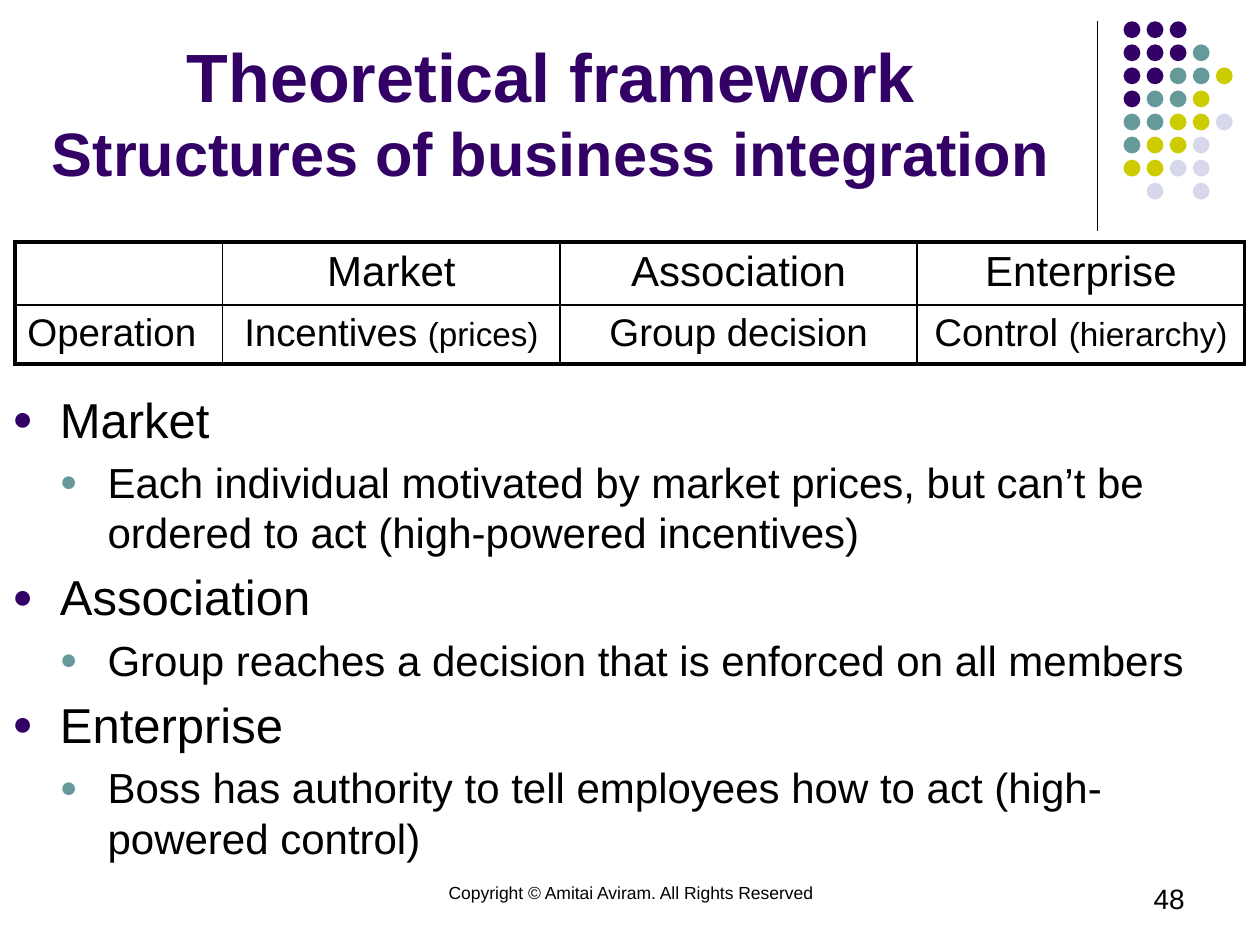
from dataclasses import dataclass

from lxml.etree import SubElement
from pptx import Presentation
from pptx.dml.color import RGBColor
from pptx.enum.shapes import MSO_CONNECTOR, MSO_SHAPE
from pptx.enum.text import MSO_ANCHOR, PP_ALIGN
from pptx.oxml.ns import qn
from pptx.util import Cm, Pt


@dataclass(frozen=True)
class Theme:
    font: str = "Arial"
    ink: str = "000000"
    purple: str = "330066"
    teal: str = "669999"
    olive: str = "CCCC00"
    lavender: str = "D8D8EC"
    title: int = 39
    subtitle: int = 35
    topic: int = 28
    detail: int = 24
    operation: int = 22
    aside: int = 19
    page: int = 16
    footer: int = 10


theme = Theme()


def add_run(paragraph, text, size, color=theme.ink, bold=False):
    run = paragraph.add_run()
    run.text = text
    run.font.name = theme.font
    run.font.size = Pt(size)
    run.font.bold = bold
    run.font.color.rgb = RGBColor.from_string(color)


def add_text_frame(left, top, width, height):
    frame = slide.shapes.add_textbox(Cm(left), Cm(top), Cm(width), Cm(height)).text_frame
    frame.word_wrap = True
    return frame


prs = Presentation()
prs.slide_width, prs.slide_height = Cm(25.4), Cm(19.05)
slide = prs.slides.add_slide(prs.slide_layouts[6])

divider = slide.shapes.add_connector(
    MSO_CONNECTOR.STRAIGHT, Cm(22.12), Cm(0.43), Cm(22.12), Cm(4.65)
)
divider.line.color.rgb = RGBColor.from_string(theme.ink)
divider.line.width = Pt(0.75)
SubElement(divider._element.spPr, qn("a:effectLst"))

dot_colors = {"P": theme.purple, "T": theme.teal, "O": theme.olive, "L": theme.lavender}
dot_rows = ["PPP", "PPPT", "PPTTO", "PTTO", "TTOOL", "TOOL", "OOLL", " L L"]
dot_pitch, dot_size = 0.465, 0.34
for row, letters in enumerate(dot_rows):
    for column, letter in enumerate(letters):
        if letter == " ":
            continue
        dot = slide.shapes.add_shape(
            MSO_SHAPE.OVAL,
            Cm(22.65 + column * dot_pitch),
            Cm(0.43 + row * dot_pitch),
            Cm(dot_size),
            Cm(dot_size),
        )
        dot.shadow.inherit = False
        dot.fill.solid()
        dot.fill.fore_color.rgb = RGBColor.from_string(dot_colors[letter])
        dot.line.fill.background()

footers = [
    (8.69, 8.05, PP_ALIGN.CENTER, "Copyright © Amitai Aviram. All Rights Reserved", theme.footer),
    (18.21, 5.92, PP_ALIGN.RIGHT, "48", theme.page),
]
for left, width, alignment, text, size in footers:
    footer = add_text_frame(left, 17.65, width, 1.27).paragraphs[0]
    footer.alignment = alignment
    add_run(footer, text, size)

heading = add_text_frame(0, 0.33, 22.22, 3.61)
heading.vertical_anchor = MSO_ANCHOR.BOTTOM
heading_line = heading.paragraphs[0]
heading_line.alignment = PP_ALIGN.CENTER
add_run(heading_line, "Theoretical framework", theme.title, theme.purple, True)
heading_line.add_line_break()
add_run(heading_line, "Structures of business integration", theme.subtitle, theme.purple, True)

topics = [
    ("Market", "Each individual motivated by market prices, but can’t be ordered to act (high-powered incentives)"),
    ("Association", "Group reaches a decision that is enforced on all members"),
    ("Enterprise", "Boss has authority to tell employees how to act (high-powered control)"),
]
levels = [(theme.topic, theme.purple), (theme.detail, theme.teal)]
hanging = Cm(0.96)
body = add_text_frame(0, 7.72, 25.4, 10.21)
for topic in topics:
    for level, (text, (size, bullet_color)) in enumerate(zip(topic, levels)):
        first = level == 0 and topic is topics[0]
        paragraph = body.paragraphs[0] if first else body.add_paragraph()
        paragraph.level = level
        paragraph.space_before = Pt(size * 0.2)
        properties = paragraph._p.get_or_add_pPr()
        properties.set("marL", str(hanging * (level + 1)))
        properties.set("indent", str(-hanging))
        SubElement(SubElement(properties, qn("a:buClr")), qn("a:srgbClr"), val=bullet_color)
        SubElement(properties, qn("a:buSzPct"), val="70000")
        SubElement(properties, qn("a:buFont"), typeface=theme.font)
        SubElement(properties, qn("a:buChar"), char="●")
        add_run(paragraph, text, size)

structures = [
    [[], [("Market", theme.detail)], [("Association", theme.detail)], [("Enterprise", theme.detail)]],
    [
        [("Operation", theme.operation)],
        [("Incentives ", theme.operation), ("(prices)", theme.aside)],
        [("Group decision", theme.operation)],
        [("Control ", theme.operation), ("(hierarchy)", theme.aside)],
    ],
]
column_widths = [4.19, 6.8, 7.2, 6.6]
row_heights = [1.27, 1.19]
table = slide.shapes.add_table(
    2, 4, Cm(0.3), Cm(4.88), Cm(sum(column_widths)), Cm(sum(row_heights))
).table
table.first_row = table.horz_banding = False
for column, width in zip(table.columns, column_widths):
    column.width = Cm(width)
for row, height in zip(table.rows, row_heights):
    row.height = Cm(height)

for row, cells in enumerate(structures):
    for column, runs in enumerate(cells):
        cell = table.cell(row, column)
        label = cell.text_frame.paragraphs[0]
        label.alignment = PP_ALIGN.LEFT if column == 0 else PP_ALIGN.CENTER
        for text, size in runs:
            add_run(label, text, size)
        if runs:
            label.space_before = Pt(runs[0][1] * 0.2)
        outer_edges = {"L": column == 0, "R": column == 3, "T": row == 0, "B": row == 1}
        for edge, outer in outer_edges.items():
            border = SubElement(
                cell._tc.get_or_add_tcPr(), qn(f"a:ln{edge}"), w=str(Pt(2.25 if outer else 1))
            )
            SubElement(SubElement(border, qn("a:solidFill")), qn("a:srgbClr"), val=theme.ink)
        cell.fill.background()

prs.save("out.pptx")
